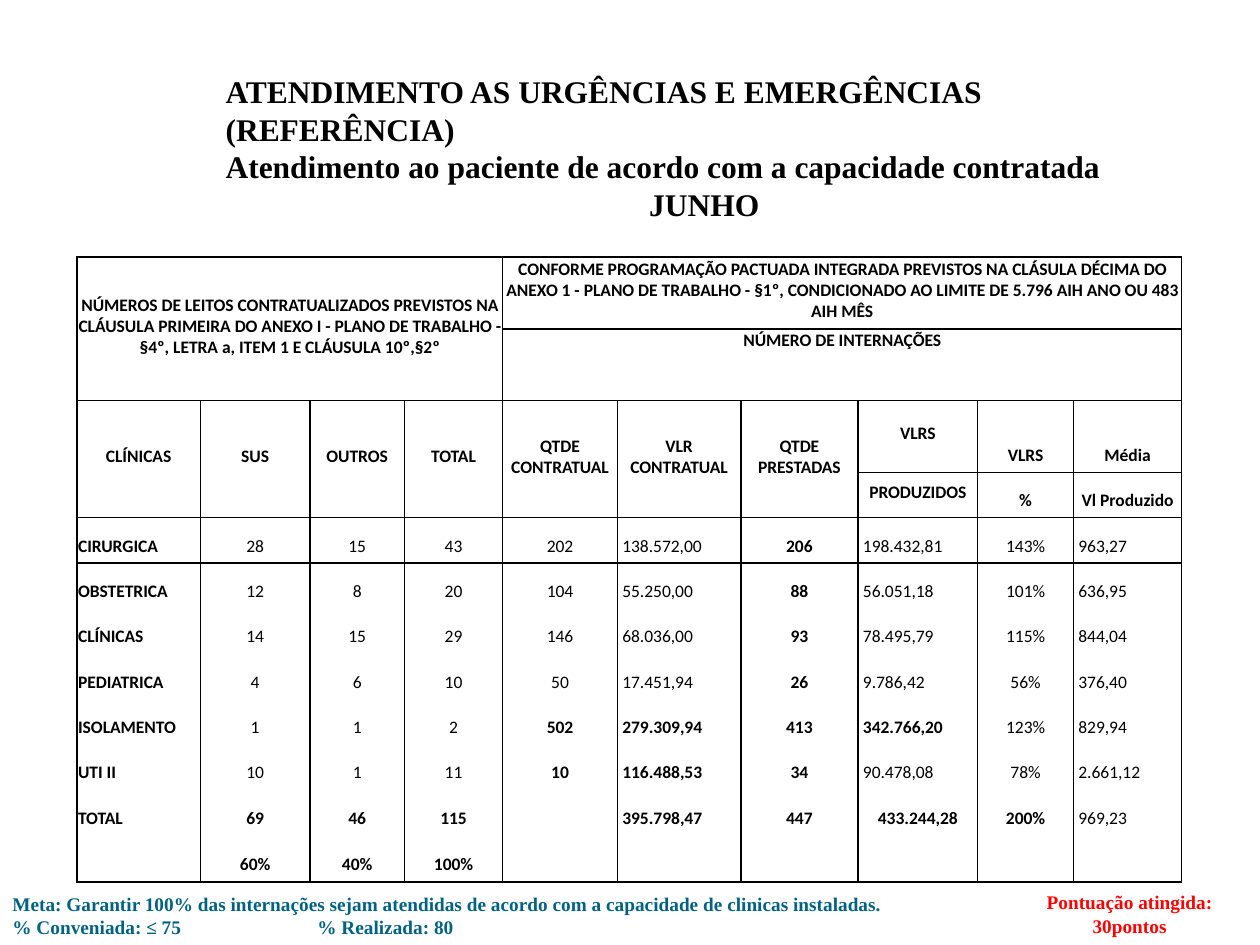
"""Build the June slide on emergency care against contracted capacity."""
from lxml import etree
from pptx import Presentation
from pptx.dml.color import RGBColor
from pptx.enum import shapes, text
from pptx.oxml import ns
from pptx.util import Inches, Pt

BLACK = RGBColor(0, 0, 0)
WHITE = RGBColor(0xFF, 0xFF, 0xFF)
TEAL = RGBColor(0x00, 0x62, 0x83)
RED = RGBColor(0xFF, 0, 0)
NO_STYLE = "{2D5ABB26-0587-4C30-8999-92F81FD0307C}"
LEFT, CENTER = text.PP_ALIGN.LEFT, text.PP_ALIGN.CENTER
TOP, MIDDLE, BOTTOM = text.MSO_ANCHOR.TOP, text.MSO_ANCHOR.MIDDLE, text.MSO_ANCHOR.BOTTOM


def format_text(p, align, font, size, color, bold=True):
    p.alignment = align
    for r in p.runs:
        r.font.name = font
        r.font.size = Pt(size)
        r.font.bold = bold
        r.font.color.rgb = color


def add_border(cell, side, width):
    ln = etree.SubElement(cell._tc.get_or_add_tcPr(), ns.qn(f"a:ln{side}"), w=str(Pt(width)))
    fill = etree.SubElement(ln, ns.qn("a:solidFill"))
    etree.SubElement(fill, ns.qn("a:srgbClr"), val=str(BLACK))


prs = Presentation()
prs.slide_width, prs.slide_height = Inches(10), Inches(7.5)
s = prs.slides.add_slide(prs.slide_layouts[5])

title = s.shapes.title
title.left, title.top, title.width, title.height = [Inches(v) for v in (1.69, 0.52, 7.8, 1.31)]
tf = title.text_frame
tf.text = ("ATENDIMENTO AS URGÊNCIAS E EMERGÊNCIAS (REFERÊNCIA)\v"
           "Atendimento ao paciente de acordo com a capacidade contratada\nJUNHO")
tf.word_wrap = True
tf.auto_size = text.MSO_AUTO_SIZE.NONE
tf.vertical_anchor = TOP
for p, align in zip(tf.paragraphs, (LEFT, CENTER)):
    format_text(p, align, "Times New Roman", 18, BLACK)

footers = [
    (0, 7.03, 10, LEFT, TEAL,
     "Meta: Garantir 100% das internações sejam atendidas de acordo com a capacidade "
     "de clinicas instaladas.\v% Conveniada: ≤ 75\t% Realizada: 80"),
    (7.92, 7.02, 2.09, CENTER, RED, "Pontuação atingida: 30pontos"),
]
for x, y, w, align, color, words in footers:
    sp = s.shapes.add_shape(shapes.MSO_SHAPE.RECTANGLE, Inches(x), Inches(y), Inches(w), Inches(0.47))
    sp.shadow.inherit = False
    sp.fill.solid()
    sp.fill.fore_color.rgb = WHITE
    sp.line.fill.background()
    tf = sp.text_frame
    tf.word_wrap = True
    tf.vertical_anchor = TOP
    tf.text = words
    p = tf.paragraphs[0]
    if "\t" in words:
        tabs = etree.SubElement(p._p.get_or_add_pPr(), ns.qn("a:tabLst"))
        etree.SubElement(tabs, ns.qn("a:tab"), pos=str(Inches(2.42)), algn="l")
    format_text(p, align, "Times New Roman", 11, color)

col_widths = [0.98, 0.87, 0.75, 0.78, 0.91, 0.98, 0.93, 0.95, 0.76, 0.86]
row_heights = [0.57] * 3 + [0.36] * 8 + [0.35]
rows = [
    ["NÚMEROS DE LEITOS CONTRATUALIZADOS PREVISTOS NA CLÁUSULA PRIMEIRA DO ANEXO I - "
     "PLANO DE TRABALHO - §4º, LETRA a, ITEM 1 E CLÁUSULA 10º,§2º", "", "", "",
     "CONFORME PROGRAMAÇÃO PACTUADA INTEGRADA PREVISTOS NA CLÁSULA DÉCIMA DO ANEXO 1 - "
     "PLANO DE TRABALHO - §1º, CONDICIONADO AO LIMITE DE 5.796 AIH ANO OU 483 AIH MÊS"],
    ["", "", "", "", "NÚMERO DE INTERNAÇÕES"],
    ["CLÍNICAS", "SUS", "OUTROS", "TOTAL", "QTDE CONTRATUAL", "VLR CONTRATUAL",
     "QTDE PRESTADAS", "VLRS", "VLRS", "Média"],
    ["", "", "", "", "", "", "", "PRODUZIDOS", "%", "Vl Produzido"],
    ["CIRURGICA", "28", "15", "43", "202", "138.572,00", "206", "198.432,81", "143%", "963,27"],
    ["OBSTETRICA", "12", "8", "20", "104", "55.250,00", "88", "56.051,18", "101%", "636,95"],
    ["CLÍNICAS", "14", "15", "29", "146", "68.036,00", "93", "78.495,79", "115%", "844,04"],
    ["PEDIATRICA", "4", "6", "10", "50", "17.451,94", "26", "9.786,42", "56%", "376,40"],
    ["ISOLAMENTO", "1", "1", "2", "502", "279.309,94", "413", "342.766,20", "123%", "829,94"],
    ["UTI II", "10", "1", "11", "10", "116.488,53", "34", "90.478,08", "78%", "2.661,12"],
    ["TOTAL", "69", "46", "115", "", "395.798,47", "447", "433.244,28", "200%", "969,23"],
    ["", "60%", "40%", "100%"],
]
first_body, isolation, uti, total, last = 4, 8, 9, 10, 11
bold_cells = {(isolation, 4), (isolation, 5), (isolation, 7), (uti, 4), (uti, 5)}

frame = s.shapes.add_table(len(rows), len(col_widths), Inches(0.61), Inches(2.04),
                           Inches(sum(col_widths)), Inches(sum(row_heights)))
table = frame.table
table.first_row = table.horz_banding = False
table._tbl.tblPr.find(ns.qn("a:tableStyleId")).text = NO_STYLE
for column, width in zip(table.columns, col_widths):
    column.width = Inches(width)
for row, height in zip(table.rows, row_heights):
    row.height = Inches(height)

merges = [(0, 0, 1, 3), (0, 4, 0, 9), (1, 4, 1, 9)] + [(2, c, 3, c) for c in range(7)]
for r1, c1, r2, c2 in merges:
    table.cell(r1, c1).merge(table.cell(r2, c2))

for i, values in enumerate(rows):
    for j in range(len(col_widths)):
        cell = table.cell(i, j)
        cell.margin_left = cell.margin_right = cell.margin_top = Inches(0.01)
        cell.margin_bottom = Inches(0.05)
        if not cell.is_spanned:
            split_head = i in (2, 3) and j >= 7
            add_border(cell, "L", 0.5 if (i, j) == (2, 5) else 1)
            add_border(cell, "R", 0.5 if (i, j) == (2, 4) else 1)
            if i <= 2 or i == first_body:
                add_border(cell, "T", 1)
            if i < 2 or i in (3, last) or (i == 2 and not split_head):
                add_border(cell, "B", 1)
        cell.fill.background()
        cell.vertical_anchor = MIDDLE if i < first_body else BOTTOM
        if (i, j) == (1, 4):
            cell.vertical_anchor = TOP
        elif i in (2, 3) and j >= 8:
            cell.vertical_anchor = BOTTOM
        if j >= len(values) or not values[j]:
            continue
        align = LEFT if i >= first_body and j in (0, 5, 7, 9) else CENTER
        if (i, j) == (total, 7):
            align = CENTER
        if align == LEFT and j:
            cell.margin_left = Inches(0.04)
        bold = i < first_body or j in (0, 6) or (i >= total and j != 9) or (i, j) in bold_cells
        cell.text_frame.text = values[j]
        format_text(cell.text_frame.paragraphs[0], align, "Calibri", 10, BLACK, bold)

prs.save("out.pptx")
